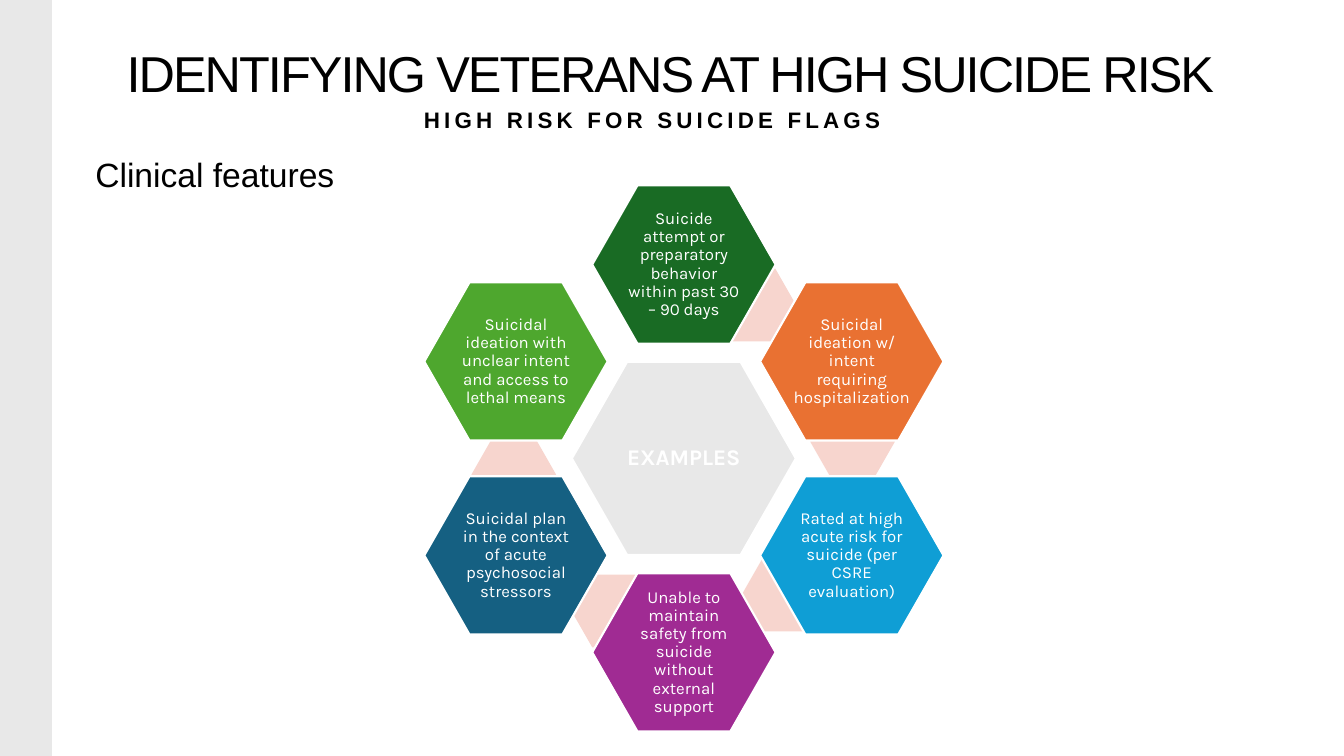
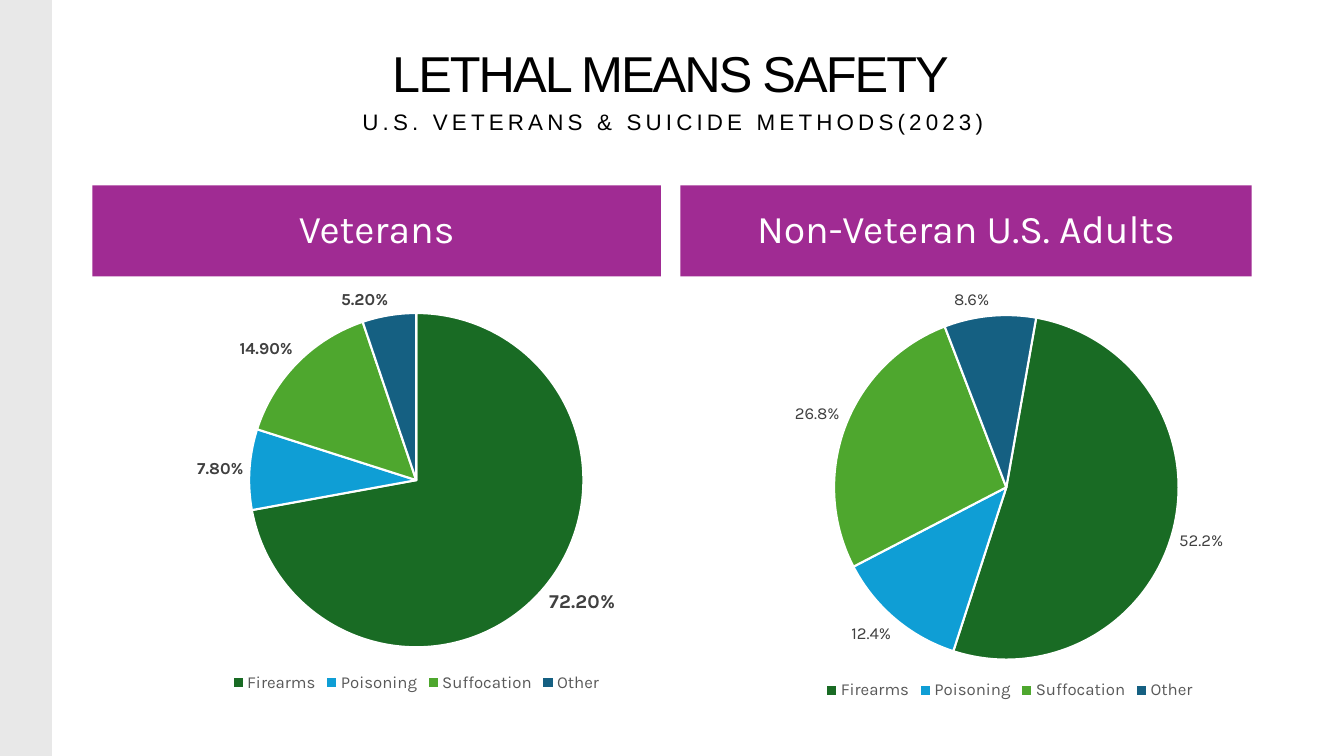
from math import cos, radians, sin

from lxml import etree
from pptx import Presentation
from pptx import util as u
from pptx.chart import data
from pptx.dml.color import RGBColor
from pptx.enum import chart as ch, shapes, text
from pptx.oxml import ns

Pt = u.Pt

BLACK = RGBColor(0x00, 0x00, 0x00)
WHITE = RGBColor(0xFF, 0xFF, 0xFF)
GRAY = RGBColor(0xE8, 0xE8, 0xE8)
DARK = RGBColor(0x40, 0x40, 0x40)
SLATE = RGBColor(0x59, 0x59, 0x59)
PINK = RGBColor(0xF7, 0xD5, 0xCE)
PINE = RGBColor(0x19, 0x6B, 0x24)
ORANGE = RGBColor(0xE9, 0x71, 0x32)
BLUE = RGBColor(0x0F, 0x9E, 0xD5)
PURPLE = RGBColor(0xA0, 0x2B, 0x93)
NAVY = RGBColor(0x15, 0x60, 0x82)
GREEN = RGBColor(0x4E, 0xA7, 0x2E)

TITLE = dict(name="Arial", size=Pt(36), color=BLACK)
SUB = dict(name="Arial", size=Pt(16), color=BLACK)
LEAD = dict(name="Arial", size=Pt(24), color=BLACK)
HEX = dict(name="Karla", size=Pt(12), color=WHITE)
HUB = dict(name="Karla", size=Pt(16), bold=True, color=WHITE)
BAR = dict(name="Karla", size=Pt(28), color=WHITE)
LABEL = dict(name="Karla", size=Pt(12), color=DARK)
KEY = dict(name="Karla", size=Pt(12), color=SLATE)

MID = text.MSO_ANCHOR.MIDDLE
CENTER = text.PP_ALIGN.CENTER
HEXAGON = shapes.MSO_SHAPE.HEXAGON
RECT = shapes.MSO_SHAPE.RECTANGLE

# Hexagon ring, clockwise from the top
HUB_X, HUB_Y, RADIUS = 488.5, 327.5, 138.5
RING = [
    ("Suicide attempt or preparatory behavior\nwithin past 30 – 90 days", PINE),
    ("Suicidal ideation w/ intent requiring hospitalization", ORANGE),
    ("Rated at high acute risk for suicide (per CSRE evaluation)", BLUE),
    ("Unable to maintain safety from suicide without external support", PURPLE),
    ("Suicidal plan in the context of acute psychosocial stressors", NAVY),
    ("Suicidal ideation with unclear intent and access to lethal means", GREEN),
]
LINKS = [(538.5, 218), (609, 315.5), (560, 425), (438.5, 436.5), (367, 339)]

METHODS = ["Firearms", "Poisoning", "Suffocation", "Other"]
SLICES = [PINE, BLUE, GREEN, NAVY]


def style(font, look):
    for key, val in look.items():
        if key == "color":
            font.color.rgb = val
        else:
            setattr(font, key, val)


def write(frame, words, look, align=CENTER, lead=0.9, track=0):
    """Fill a frame with one paragraph; track is letter spacing in points."""
    frame.word_wrap = True
    par = frame.paragraphs[0]
    par.text = words
    par.alignment = align
    par.line_spacing = lead
    for run in par.runs:
        style(run.font, look)
        if track:
            run.font.size = look["size"]
            run._r.get_or_add_rPr().set("spc", str(round(track * 100)))


def label(slide, box, words, look, anchor=text.MSO_ANCHOR.TOP, **form):
    frame = slide.shapes.add_textbox(*map(Pt, box)).text_frame
    frame.vertical_anchor = anchor
    write(frame, words, look, **form)


def block(slide, kind, box, fill, line=None, width=1):
    shape = slide.shapes.add_shape(kind, *map(Pt, box))
    shape.shadow.inherit = False
    shape.fill.solid()
    shape.fill.fore_color.rgb = fill
    if line is None:
        shape.line.fill.background()
    else:
        shape.line.color.rgb = line
        shape.line.width = Pt(width)
    return shape


def hexa(slide, x, y, size, fill, words="", look=HEX):
    """Draw a hexagon centred on x, y; those with words get a white edge."""
    wide, high = size
    box = (x - wide / 2, y - high / 2, wide, high)
    shape = block(slide, HEXAGON, box, fill, WHITE if words else None, 1.5)
    shape.adjustments[0] = 0.286
    if words:
        frame = shape.text_frame
        frame.vertical_anchor = MID
        for side in ("left", "right", "top", "bottom"):
            setattr(frame, f"margin_{side}", Pt(1.4))
        write(frame, words, look)


def bar(slide, x, wide, words):
    frame = block(slide, RECT, (x, 132.5, wide, 65), PURPLE).text_frame
    frame.vertical_anchor = MID
    write(frame, words, BAR)


def node(up, tag, val):
    return etree.SubElement(up, ns.qn(f"c:{tag}"), val=str(val))


def place(chart, area):
    """Fix the inner plot area, as shares of the chart."""
    plot = chart._chartSpace.chart.plotArea
    for old in plot.findall(ns.qn("c:layout")):
        plot.remove(old)
    lay = etree.Element(ns.qn("c:layout"))
    plot.insert(0, lay)
    man = etree.SubElement(lay, ns.qn("c:manualLayout"))
    node(man, "layoutTarget", "inner")
    for tag in ("xMode", "yMode"):
        node(man, tag, "edge")
    for tag, val in zip("xywh", area):
        node(man, tag, val)


def pie(slide, box, vals, form, turn=0, bold=False):
    info = data.CategoryChartData(number_format=form)
    info.categories = METHODS
    info.add_series("Series 1", vals)
    chart = slide.shapes.add_chart(
        ch.XL_CHART_TYPE.PIE, *map(Pt, box), info).chart
    style(chart.font, dict(name="Karla", size=Pt(10), color=BLACK))
    chart.has_title = False
    chart.has_legend = True
    chart.legend.position = ch.XL_LEGEND_POSITION.BOTTOM
    chart.legend.include_in_layout = False
    style(chart.legend.font, KEY)

    plot = chart.plots[0]
    plot.vary_by_categories = True
    series = plot.series[0]
    for num, fill in enumerate(SLICES):
        part = series.points[num].format
        part.fill.solid()
        part.fill.fore_color.rgb = fill
        part.line.color.rgb = WHITE
        part.line.width = Pt(1.5)
    tags = series.data_labels
    tags.show_value = True
    tags.show_percentage = False
    tags.number_format = form
    tags.number_format_is_linked = False
    tags.position = ch.XL_LABEL_POSITION.OUTSIDE_END
    style(tags.font, LABEL | dict(bold=bold))
    node(plot._element, "firstSliceAng", turn)
    return chart


def page(deck, title, sub, mid, top, bold=False):
    """Add a slide with side band, title and a subtitle centred on mid."""
    slide = deck.slides.add_slide(deck.slide_layouts[6])
    block(slide, RECT, (0, 0, 36.7, 540), GRAY, GRAY)
    label(slide, (49, 28, 860, 49), title, TITLE, text.MSO_ANCHOR.BOTTOM,
          lead=Pt(44.4), track=-1.4)
    label(slide, (mid - 250, top, 500, 26.5), sub, SUB | dict(bold=bold),
          lead=Pt(19.2), track=3)
    return slide


def flags(deck):
    slide = page(deck, "IDENTIFYING VETERANS AT HIGH SUICIDE RISK",
                 "HIGH RISK FOR SUICIDE FLAGS", 466, 72, bold=True)
    label(slide, (61, 109.5, 809, 51), "Clinical features", LEAD,
          align=text.PP_ALIGN.LEFT)
    hexa(slide, HUB_X, HUB_Y, (160, 138), GRAY, "EXAMPLES", HUB)
    for x, y in LINKS:
        hexa(slide, x, y, (60.5, 52), PINK)
    for num, (words, fill) in enumerate(RING):
        turn = radians(num * 360 / len(RING))
        hexa(slide, HUB_X + RADIUS * sin(turn), HUB_Y - RADIUS * cos(turn),
             (131, 113), fill, words)


def means(deck):
    slide = page(deck, "LETHAL MEANS SAFETY",
                 "U.S. VETERANS & SUICIDE METHODS(2023)", 481, 73.5)
    bar(slide, 66, 406, "Veterans")
    vets = pie(slide, (56, 196, 482.5, 301.5), (0.722, 0.078, 0.149, 0.052),
               "0.00%", bold=True)
    first = vets.plots[0].series[0].points[0].data_label
    style(first.font, LABEL | dict(size=Pt(14), bold=True))
    first.position = ch.XL_LABEL_POSITION.OUTSIDE_END
    bar(slide, 486, 408, "Non-Veteran U.S. Adults")
    rest = pie(slide, (480, 187, 482.5, 316), (0.522, 0.124, 0.268, 0.086),
               "0.0%", turn=10)
    place(rest, (0.24, 0.11, 0.51, 0.8))


def main():
    deck = Presentation()
    deck.slide_width, deck.slide_height = Pt(960), Pt(540)
    flags(deck)
    means(deck)
    deck.save("out.pptx")


if __name__ == "__main__":
    main()
